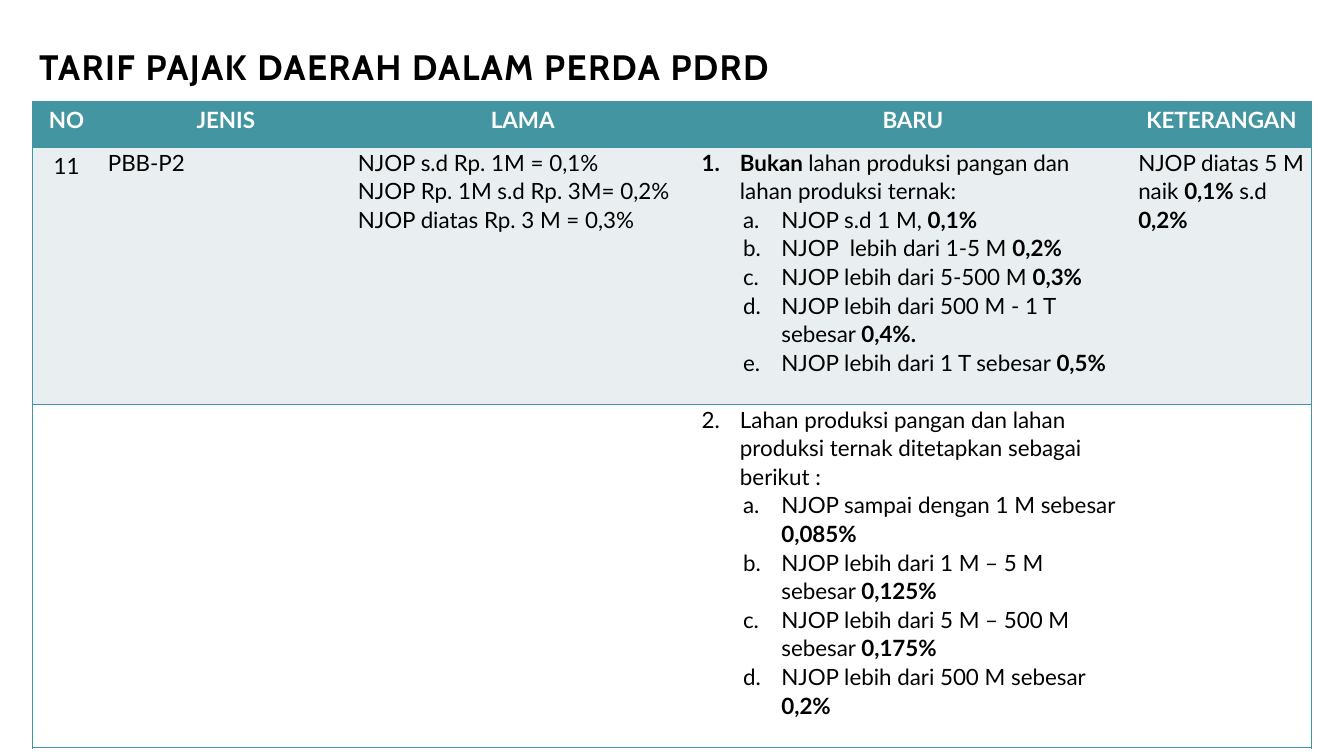
from lxml import etree
from pptx import Presentation
from pptx.dml.color import RGBColor
from pptx.enum.text import MSO_ANCHOR, PP_ALIGN
from pptx.oxml.ns import qn
from pptx.util import Inches, Pt

CENTER, LEFT = PP_ALIGN.CENTER, PP_ALIGN.LEFT
MIDDLE = MSO_ANCHOR.MIDDLE
TEAL = RGBColor(0x44, 0x95, 0xA2)
PALE = RGBColor(0xE9, 0xEF, 0xF0)
WHITE = RGBColor(0xFF, 0xFF, 0xFF)
BLACK = RGBColor(0x00, 0x00, 0x00)

COLUMNS = [0.68, 2.48, 3.41, 4.33, 1.79]
ROWS = [0.45, 2.55, 3.41]
ROW_FILLS = [TEAL, PALE, WHITE]
INDENTS = {"1": 0.38, "a": 0.79}
SCHEMES = {"1": "arabicPeriod", "a": "alphaLcPeriod"}

HEADINGS = ["NO", "JENIS", "LAMA", "BARU", "KETERANGAN"]
BODY = {
    (1, 1): [("", "PBB-P2")],
    (1, 2): [
        ("", "NJOP s.d Rp. 1M = 0,1%"),
        ("", "NJOP Rp. 1M s.d Rp. 3M= 0,2%"),
        ("", "NJOP diatas Rp. 3 M = 0,3%"),
    ],
    (1, 3): [
        ("1", "*Bukan *lahan produksi pangan dan lahan produksi ternak:"),
        ("a", "NJOP s.d 1 M, *0,1%*"),
        ("a", "NJOP  lebih dari 1-5 M *0,2%*"),
        ("a", "NJOP lebih dari 5-500 M *0,3%*"),
        ("a", "NJOP lebih dari 500 M - 1 T sebesar *0,4%.*"),
        ("a", "NJOP lebih dari 1 T sebesar *0,5%*"),
    ],
    (1, 4): [("", "NJOP diatas 5 M naik *0,1%* s.d *0,2%*")],
    (2, 3): [
        ("1", "Lahan produksi pangan dan lahan produksi ternak ditetapkan sebagai berikut :"),
        ("a", "NJOP sampai dengan 1 M sebesar *0,085%*"),
        ("a", "NJOP lebih dari 1 M – 5 M  sebesar *0,125%*"),
        ("a", "NJOP lebih dari 5 M – 500 M sebesar *0,175%*"),
        ("a", "NJOP lebih dari 500 M sebesar *0,2%*"),
    ],
}


def add_span(para, text, **formats):
    span = para.add_run()
    span.text = text
    color = formats.pop("color")
    for name, value in formats.items():
        setattr(span.font, name, value)
    span.font.color.rgb = color
    return span


def add_border(cell, side, visible):
    line = etree.SubElement(cell._tc.get_or_add_tcPr(), qn("a:ln" + side))
    line.set("w", str(Pt(1) if visible else 0))
    if visible:
        fill = etree.SubElement(line, qn("a:solidFill"))
        etree.SubElement(fill, qn("a:srgbClr")).set("val", str(TEAL))
    else:
        etree.SubElement(line, qn("a:noFill"))


deck = Presentation()
deck.slide_width, deck.slide_height = Inches(13.33), Inches(7.5)
page = deck.slides.add_slide(deck.slide_layouts[6])

title = page.shapes.add_textbox(Inches(0.29), Inches(0.44), Inches(11), Inches(0.48))
title.text_frame.word_wrap = True
title.text_frame.vertical_anchor = MIDDLE
para = title.text_frame.paragraphs[0]
para.line_spacing = 0.9
span = add_span(para, "TARIF PAJAK DAERAH DALAM PERDA PDRD",
                name="Cabin", size=Pt(25.2), bold=True, color=BLACK)
span.font._element.set("spc", "100")

frame = page.shapes.add_table(len(ROWS), len(COLUMNS), Inches(0.32), Inches(1.01),
                              Inches(sum(COLUMNS)), Inches(sum(ROWS)))
table = frame.table
table.first_row = table.horz_banding = False
for column, width in zip(table.columns, COLUMNS):
    column.width = Inches(width)
for row, height in zip(table.rows, ROWS):
    row.height = Inches(height)

for r, row_fill in enumerate(ROW_FILLS):
    for c in range(len(COLUMNS)):
        cell = table.cell(r, c)
        add_border(cell, "L", c == 0)
        add_border(cell, "R", c == len(COLUMNS) - 1)
        add_border(cell, "T", True)
        add_border(cell, "B", True)
        cell.fill.solid()
        cell.fill.fore_color.rgb = row_fill

labels = [(0, c, heading, WHITE, True) for c, heading in enumerate(HEADINGS)]
labels.append((1, 0, "11", BLACK, False))
for r, c, text, color, bold in labels:
    para = table.cell(r, c).text_frame.paragraphs[0]
    para.alignment = CENTER
    add_span(para, text, name="Lato", size=Pt(16), bold=bold, color=color)

for (r, c), lines in BODY.items():
    cell = table.cell(r, c)
    margins = {"margin_left": 0.07, "margin_right": 0.07, "margin_top": 0, "margin_bottom": 0}
    for name, value in margins.items():
        setattr(cell, name, Inches(value))
    for i, (level, text) in enumerate(lines):
        para = cell.text_frame.paragraphs[0] if i == 0 else cell.text_frame.add_paragraph()
        para.alignment = LEFT
        para.line_spacing = 1.07
        if level:
            properties = para._p.get_or_add_pPr()
            properties.set("marL", str(Inches(INDENTS[level])))
            properties.set("indent", str(Inches(-0.38)))
            number = etree.SubElement(properties, qn("a:buAutoNum"))
            number.set("type", SCHEMES[level])
            if level == "1" and r > 1:
                number.set("startAt", str(r))
        for part, words in enumerate(text.split("*")):
            if words:
                add_span(para, words, name="Lato", size=Pt(16), bold=part % 2 == 1, color=BLACK)

deck.save("out.pptx")
